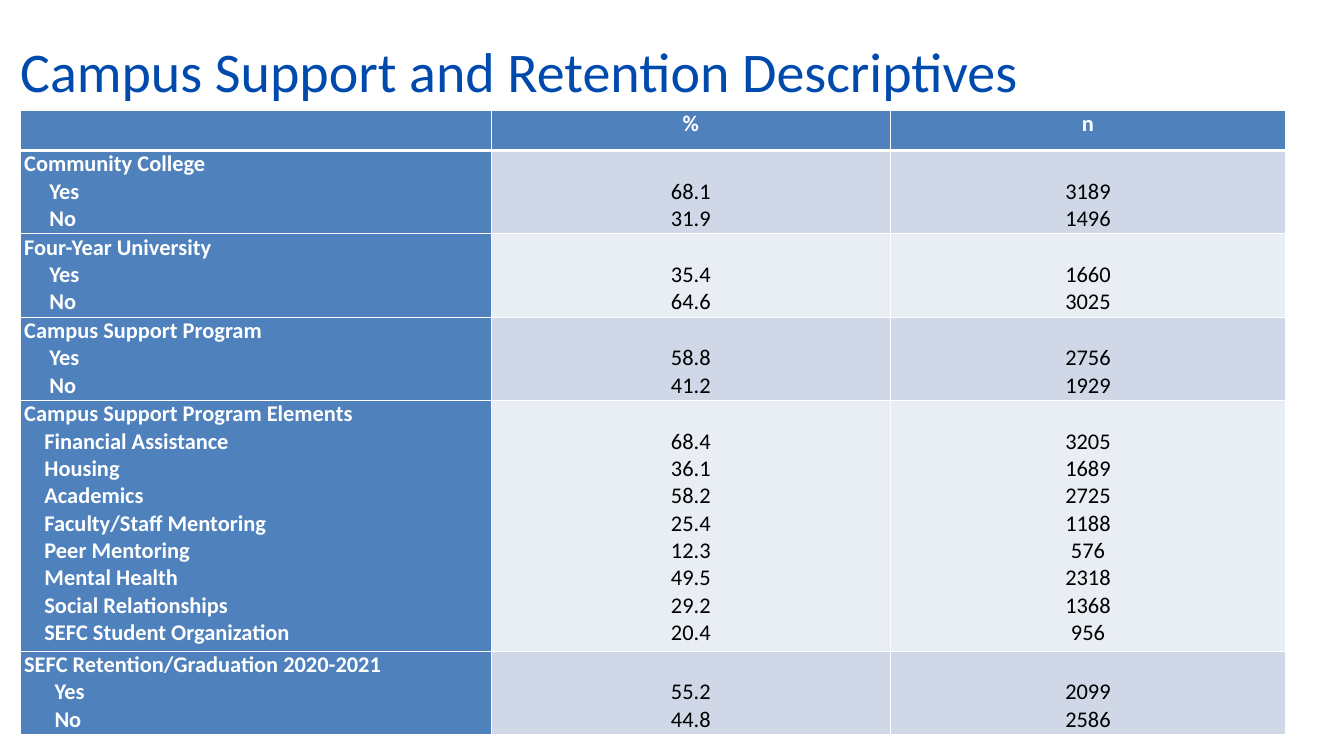
from dataclasses import dataclass

from lxml.etree import SubElement
from pptx import Presentation
from pptx.dml.color import RGBColor
from pptx.enum.text import MSO_ANCHOR as Anchor, MSO_AUTO_SIZE as AutoSize, PP_ALIGN as Align
from pptx.oxml.ns import qn
from pptx.slide import Slide
from pptx.util import Pt

COLUMN_WIDTHS = (504.8, 427.6, 423.4)
HEADINGS = ("", "%", "n")
HEADER_HEIGHT = 43.2

# Group name, row height, label indent, and (label, percent, count) lines
GROUPS = [
    ("Community College", 89.3, 27, [("Yes", "68.1", "3189"), ("No", "31.9", "1496")]),
    ("Four-Year University", 89.3, 27, [("Yes", "35.4", "1660"), ("No", "64.6", "3025")]),
    ("Campus Support Program", 89.3, 27, [("Yes", "58.8", "2756"), ("No", "41.2", "1929")]),
    ("Campus Support Program Elements", 268.6, 21.7, [
        ("Financial Assistance", "68.4", "3205"),
        ("Housing", "36.1", "1689"),
        ("Academics", "58.2", "2725"),
        ("Faculty/Staff Mentoring", "25.4", "1188"),
        ("Peer Mentoring", "12.3", "576"),
        ("Mental Health", "49.5", "2318"),
        ("Social Relationships", "29.2", "1368"),
        ("SEFC Student Organization", "20.4", "956"),
    ]),
    ("SEFC Retention/Graduation 2020-2021", 89.3, 32.5,
     [("Yes", "55.2", "2099"), ("No", "44.8", "2586")]),
]


def color(hex_string):
    return RGBColor.from_string(hex_string)


@dataclass
class Painter:
    page: Slide
    font: str = "Calibri"
    title_color: str = "004AAD"
    accent: str = "4F81BD"
    bands: tuple = ("D0D8E8", "E9EDF4")
    light: str = "FFFFFF"
    dark: str = "000000"
    text_size: float = 24
    line_height: float = 29.3

    def span(self, para, text, size, ink, bold=False):
        run = para.add_run()
        run.text = text
        run.font.name = self.font
        run.font.size = Pt(size)
        run.font.bold = bold
        run.font.color.rgb = color(ink)

    def title(self, text, left, top, width, height):
        box = self.page.shapes.title
        box.left, box.top, box.width, box.height = map(Pt, (left, top, width, height))
        frame = box.text_frame
        frame.margin_left = frame.margin_top = frame.margin_right = frame.margin_bottom = 0
        frame.vertical_anchor = Anchor.TOP
        frame.auto_size = AutoSize.NONE
        frame.word_wrap = True
        para = frame.paragraphs[0]
        para.alignment = Align.LEFT
        para.line_spacing = Pt(90)
        self.span(para, text, 60, self.title_color)

    def table(self, left, top, widths, heights):
        frame = self.page.shapes.add_table(len(heights), len(widths), Pt(left), Pt(top),
                                           Pt(sum(widths)), Pt(sum(heights)))
        table = frame.table
        for column, width in zip(table.columns, widths):
            column.width = Pt(width)
        for row, height in zip(table.rows, heights):
            row.height = Pt(height)
        return table

    def borders(self, cell, top=1, bottom=1):
        properties = cell._tc.get_or_add_tcPr()
        for side, width in (("L", 1), ("R", 1), ("T", top), ("B", bottom)):
            line = SubElement(properties, qn(f"a:ln{side}"), w=str(Pt(width)))
            fill = SubElement(line, qn("a:solidFill"))
            SubElement(fill, qn("a:srgbClr"), val=self.light)

    def cell(self, cell, lines, fill, ink, bold=False, align=Align.LEFT,
             indent=0, skip_line=False, top=1, bottom=1):
        """Fill a cell; indent applies to every line after the first."""
        self.borders(cell, top, bottom)
        cell.fill.solid()
        cell.fill.fore_color.rgb = color(fill)
        cell.margin_left = cell.margin_right = Pt(4.3)
        cell.margin_top = Pt(self.line_height if skip_line else 0)
        cell.margin_bottom = 0
        cell.vertical_anchor = Anchor.TOP
        frame = cell.text_frame
        for index, text in enumerate(lines):
            para = frame.add_paragraph() if index else frame.paragraphs[0]
            para.alignment = align
            if index and indent:
                para._p.get_or_add_pPr().set("marL", str(Pt(indent)))
            if text:
                self.span(para, text, self.text_size, ink, bold)


def main():
    deck = Presentation()
    deck.slide_width, deck.slide_height = Pt(1440), Pt(810)
    painter = Painter(deck.slides.add_slide(deck.slide_layouts[5]))
    painter.title("Campus Support and Retention Descriptives", 21.6, 21.6, 1312.6, 181.4)

    heights = [HEADER_HEIGHT] + [height for _, height, _, _ in GROUPS]
    table = painter.table(21.6, 118.1, COLUMN_WIDTHS, heights)
    for column, heading in enumerate(HEADINGS):
        painter.cell(table.cell(0, column), [heading], painter.accent, painter.light,
                     bold=True, align=Align.CENTER, bottom=3)

    for row, (name, _, indent, entries) in enumerate(GROUPS, start=1):
        top = 3 if row == 1 else 1
        labels, *values = zip(*entries)
        painter.cell(table.cell(row, 0), [name, *labels], painter.accent, painter.light,
                     bold=True, indent=indent, top=top)
        for column, numbers in enumerate(values, start=1):
            painter.cell(table.cell(row, column), numbers, painter.bands[(row - 1) % 2],
                         painter.dark, align=Align.CENTER, skip_line=True, top=top)

    deck.save("out.pptx")


if __name__ == "__main__":
    main()
